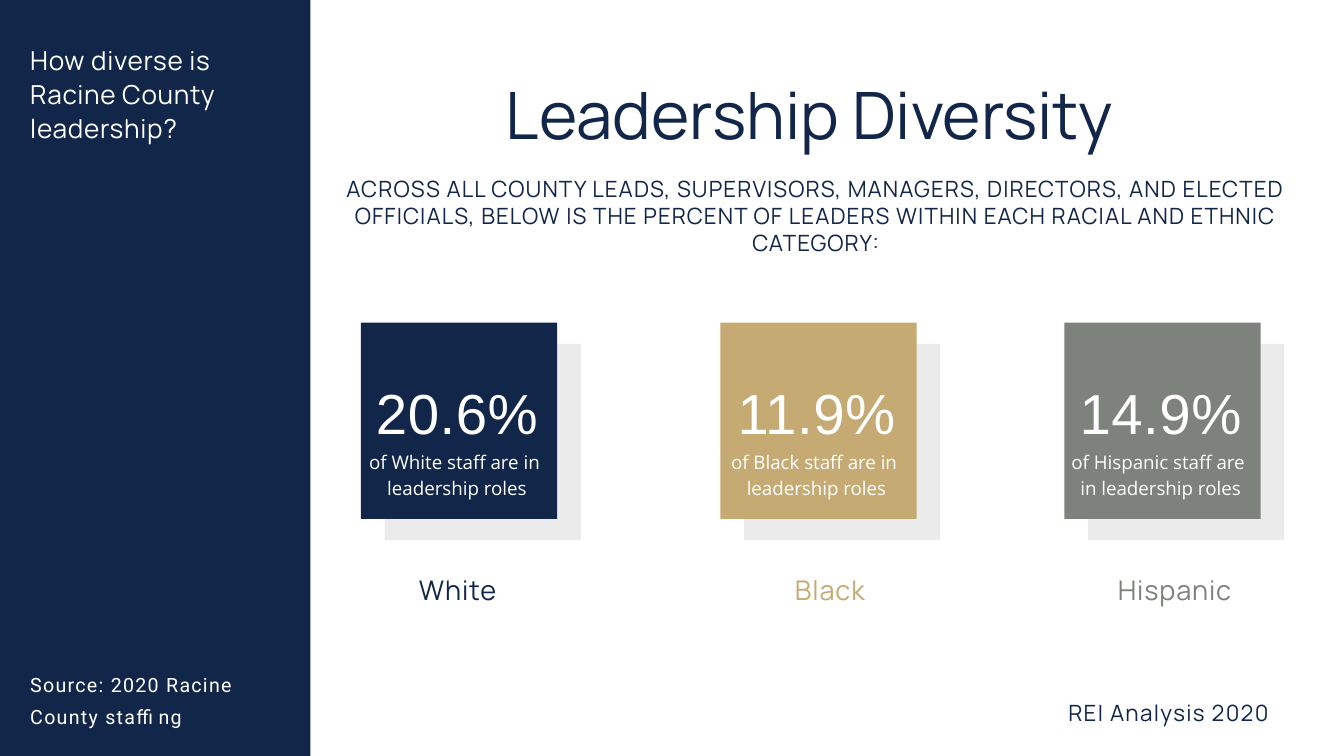
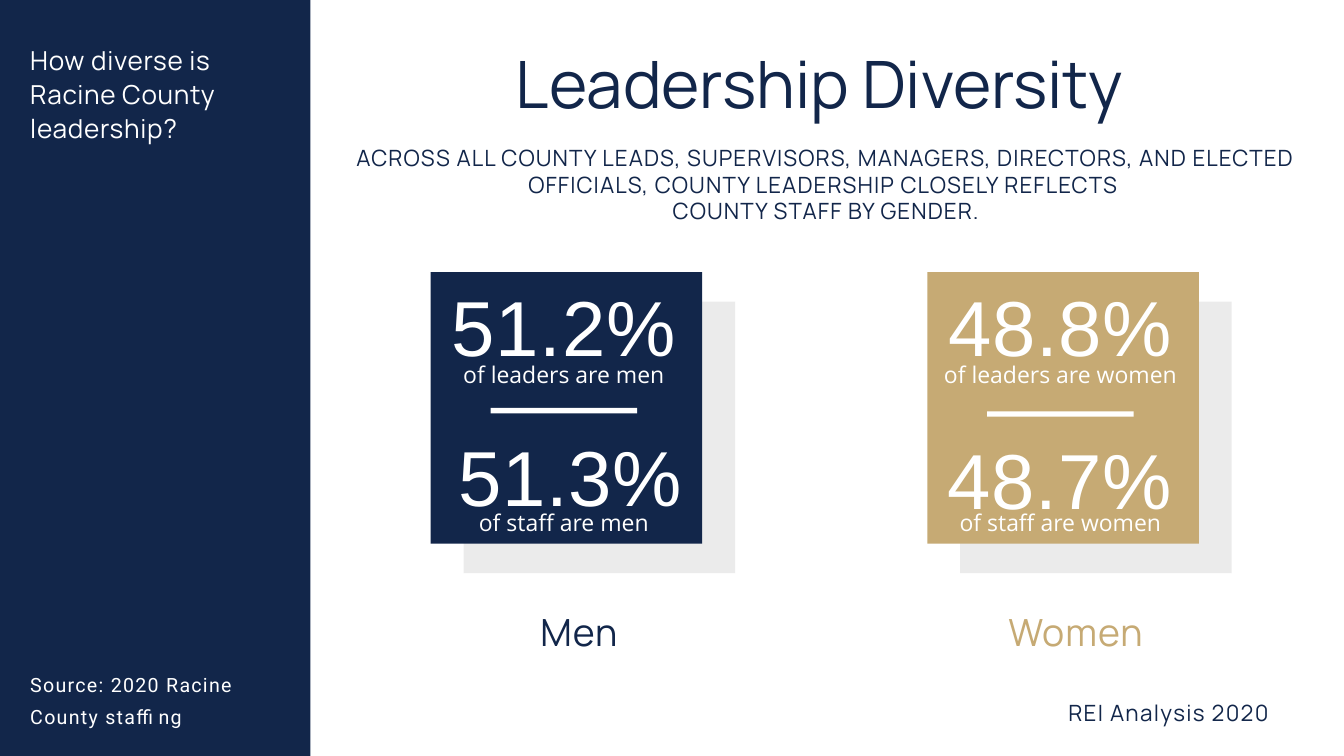
from dataclasses import dataclass

from lxml import etree
from pptx import Presentation
from pptx.dml.color import RGBColor as RGB
from pptx.enum.shapes import MSO_SHAPE as Shape
from pptx.enum.text import MSO_AUTO_SIZE as AutoSize, PP_ALIGN as Align
from pptx.oxml.ns import qn
from pptx.util import Inches, Pt


@dataclass(frozen=True)
class TextStyle:
    """Font, size, line height and letter spacing, in points."""
    font: str
    size: float
    leading: float
    spacing: float = 0


@dataclass(frozen=True)
class Theme:
    """Colours and text styles shared by the slides."""
    navy: str = "12264A"
    gold: str = "C6AA74"
    grey: str = "7D827D"
    shade: str = "D9D9D9"
    white: str = "FFFFFF"
    title: TextStyle = TextStyle("Manrope", 70, 84)
    lead: TextStyle = TextStyle("Manrope", 24, 28.8, 1.2)
    question: TextStyle = TextStyle("Manrope", 28, 36.4, 0.8)
    source: TextStyle = TextStyle("Roboto", 21, 35.1, 1.4)
    footer: TextStyle = TextStyle("Manrope", 24, 33.6, 1.4)
    race_label: TextStyle = TextStyle("Manrope", 29, 37.7, 0.9)
    race_share: TextStyle = TextStyle("Arial", 60.4, 92.4, 0.6)
    race_caption: TextStyle = TextStyle("Open Sans", 20.1, 28.2)
    gender_label: TextStyle = TextStyle("Manrope", 40.1, 52.2, 1.2)
    gender_share: TextStyle = TextStyle("Arial", 83.5, 127.8, 0.8)
    gender_caption: TextStyle = TextStyle("Open Sans", 24.6, 34.4)


THEME = Theme()


def add_text(slide, box, lines, style, color, align=Align.CENTER):
    """Add a text box without margins, one paragraph per line."""
    frame = slide.shapes.add_textbox(*map(Inches, box)).text_frame
    frame.margin_left = frame.margin_right = 0
    frame.margin_top = frame.margin_bottom = 0
    frame.word_wrap = True
    frame.auto_size = AutoSize.SHAPE_TO_FIT_TEXT
    frame.text = "\n".join(lines)
    for paragraph in frame.paragraphs:
        paragraph.alignment = align
        paragraph.line_spacing = Pt(style.leading)
        font = paragraph.font
        font.name = style.font
        font.size = Pt(style.size)
        font.color.rgb = RGB.from_string(color)
        if style.spacing:
            defaults = paragraph._p.pPr.find(qn("a:defRPr"))
            defaults.set("spc", str(round(style.spacing * 100)))


def add_block(slide, box, color, opacity=100):
    """Add a plain filled rectangle, optionally see-through."""
    block = slide.shapes.add_shape(Shape.RECTANGLE, *map(Inches, box))
    block.shadow.inherit = False
    block.line.fill.background()
    block.fill.solid()
    block.fill.fore_color.rgb = RGB.from_string(color)
    if opacity < 100:
        tint = block._element.spPr.find(".//" + qn("a:srgbClr"))
        etree.SubElement(tint, qn("a:alpha"), val=str(opacity * 1000))


def add_card(slide, left, top, side, color):
    """Add a coloured square over its offset pale square."""
    add_block(slide, (left + 0.121 * side, top + 0.109 * side, side, side),
              THEME.shade, 50)
    add_block(slide, (left, top, side, side), color)


def add_frame(slide, heading_left, heading_top, lead):
    """Add the side band, heading, lead text and footer."""
    add_block(slide, (0, 0, 4.62, 11.25), THEME.navy)
    add_text(slide, (0.45, 0.62, 3.73, 1.5),
             ["How diverse is Racine County leadership?"],
             THEME.question, THEME.white, Align.LEFT)
    add_text(slide, (0.45, 9.87, 3.94, 0.95),
             ["Source: 2020 Racine County staffing"],
             THEME.source, THEME.white, Align.LEFT)
    add_text(slide, (11.59, 10.34, 7.29, 0.46), ["REI Analysis 2020"],
             THEME.footer, THEME.navy, Align.RIGHT)
    add_text(slide, (heading_left, heading_top, 14.06, 1.18),
             ["Leadership Diversity "], THEME.title, THEME.navy)
    add_text(slide, (heading_left, heading_top + 1.5, 14.06, 1.2), lead,
             THEME.lead, THEME.navy)


def add_race_card(slide, left, label_left, label, share, caption, color):
    """Add one card with a share, its caption and the label below."""
    add_card(slide, left, 4.8, 2.92, color)
    add_text(slide, (left, 5.35, 2.86, 1.22), [share],
             THEME.race_share, THEME.white)
    add_text(slide, (left, 6.65, 2.86, 0.76), caption,
             THEME.race_caption, THEME.white)
    add_text(slide, (label_left, 8.5, 4.16, 0.52), [label],
             THEME.race_label, color)


def add_gender_card(slide, left, label, leaders, staff, color, shift):
    """Add one card comparing the leader share with the staff share."""
    shift_x, shift_y = shift
    group = label.lower()
    add_card(slide, left, 4.05, 4.04, color)
    for share, x, y in ((leaders, left, 3.76),
                        (staff, left + shift_x, 5.99 + shift_y)):
        add_text(slide, (x, y, 3.96, 1.65), [share],
                 THEME.gender_share, THEME.white)
    for role, y in (("leaders", 5.3), ("staff", 7.5)):
        add_text(slide, (left, y, 3.96, 0.44), [f"of {role} are {group}"],
                 THEME.gender_caption, THEME.white)
    add_block(slide, (left + 0.89, 6.07 + shift_y, 2.18, 0.08), THEME.white)
    add_text(slide, (left - 0.67, 9, 5.75, 0.71), [label],
             THEME.gender_label, color)


def build_race_slide(slide):
    """Show the share of leaders within each racial and ethnic category."""
    add_frame(slide, 5.11, 1.11, [
        "ACROSS ALL COUNTY LEADS, SUPERVISORS, MANAGERS, DIRECTORS, AND "
        "ELECTED OFFICIALS, BELOW IS THE PERCENT OF LEADERS WITHIN EACH "
        "RACIAL AND ETHNIC CATEGORY:"])
    add_race_card(slide, 5.37, 4.73, "White", "20.6%",
                  ["of White staff are in ", "leadership roles"], THEME.navy)
    add_race_card(slide, 10.72, 10.27, "Black", "11.9%",
                  ["of Black staff are in ", "leadership roles"], THEME.gold)
    add_race_card(slide, 15.84, 15.4, "Hispanic", "14.9%",
                  ["of Hispanic staff are ", "in leadership roles"], THEME.grey)


def build_gender_slide(slide):
    """Compare leaders with all staff by gender."""
    add_frame(slide, 5.26, 0.64, [
        "ACROSS ALL COUNTY LEADS, SUPERVISORS, MANAGERS, DIRECTORS, AND "
        "ELECTED OFFICIALS, COUNTY LEADERSHIP CLOSELY REFLECTS ",
        "COUNTY STAFF BY GENDER."])
    add_gender_card(slide, 6.41, "Men", "51.2%", "51.3%", THEME.navy, (0.1, 0))
    add_gender_card(slide, 13.8, "Women", "48.8%", "48.7%", THEME.gold,
                    (-0.01, 0.05))


def main():
    """Build both slides and save the presentation."""
    deck = Presentation()
    deck.slide_width, deck.slide_height = Inches(20), Inches(11.25)
    blank = deck.slide_layouts[6]
    for build in (build_race_slide, build_gender_slide):
        build(deck.slides.add_slide(blank))
    deck.save("out.pptx")


if __name__ == "__main__":
    main()
